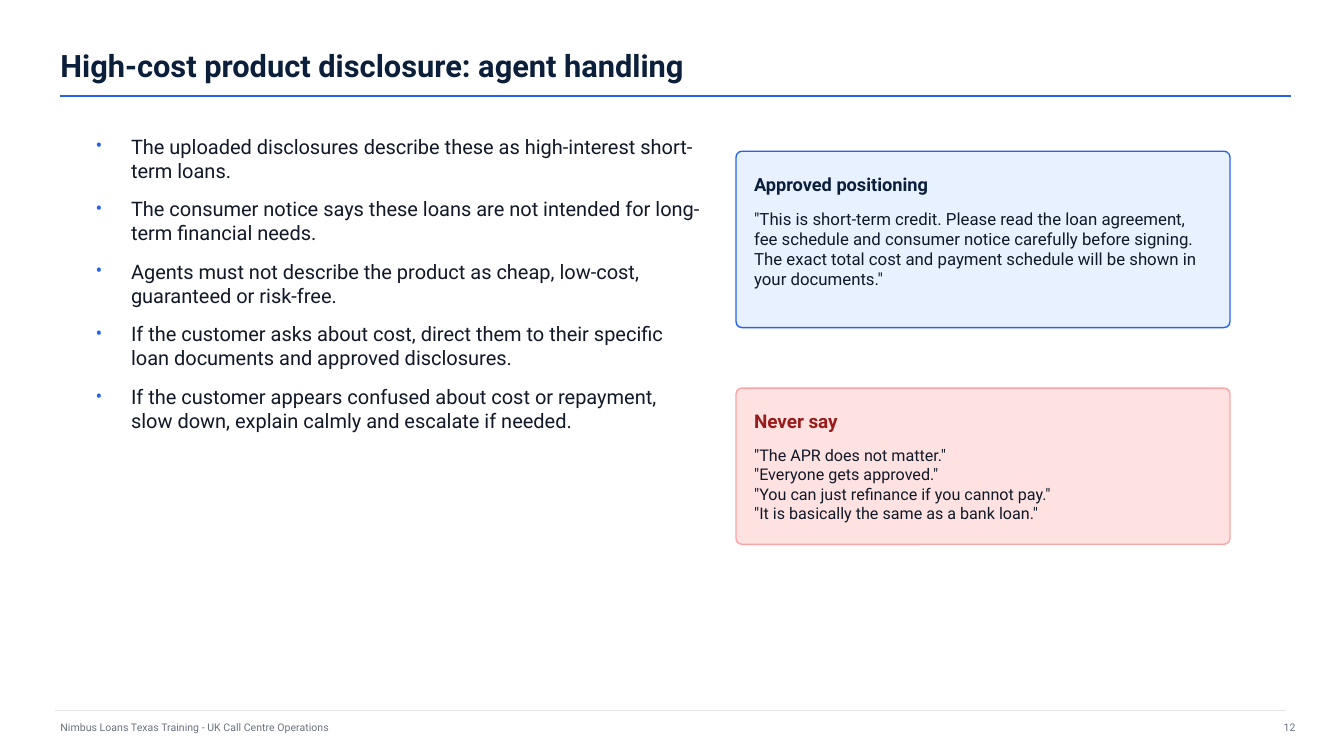
from lxml.etree import SubElement as Sub
from pptx import Presentation
from pptx.dml.color import RGBColor as RGB
from pptx.enum.shapes import MSO_CONNECTOR as LINE, MSO_SHAPE as SHAPE
from pptx.enum.text import MSO_ANCHOR as ANCHOR, PP_ALIGN as ALIGN
from pptx.oxml.ns import qn
from pptx.util import Inches, Pt

NAVY = RGB(0x0B, 0x1F, 0x3A)
INK = RGB(0x11, 0x18, 0x27)
BLUE = RGB(0x25, 0x63, 0xEB)
PALE_BLUE = RGB(0xE8, 0xF1, 0xFF)
DARK_RED = RGB(0x99, 0x1B, 0x1B)
RED = RGB(0xFC, 0xA5, 0xA5)
PALE_RED = RGB(0xFE, 0xE2, 0xE2)
GREY = RGB(0x6B, 0x72, 0x80)
RULE_GREY = RGB(0xE5, 0xE7, 0xEB)


class Deck:
    font = "Roboto"
    cell = Inches(0.1)
    pad = 1.8
    radius = 0.6

    def __init__(self, prs):
        self.s = prs.slides.add_slide(prs.slide_layouts[6])

    def grid(self, *cells):
        return [round(n * self.cell) for n in cells]

    def text(self, box, lines, size, color, bold=False, align=ALIGN.LEFT,
             anchor=ANCHOR.MIDDLE, gap=0, bullet=None, indent=0):
        tf = self.s.shapes.add_textbox(*self.grid(*box)).text_frame
        frame = {"word_wrap": True, "vertical_anchor": anchor, "margin_left": 0,
                 "margin_right": 0, "margin_top": 0, "margin_bottom": 0}
        for name, value in frame.items():
            setattr(tf, name, value)
        style = {"name": self.font, "size": Pt(size), "bold": bold}
        for i, line in enumerate(lines):
            p = tf.add_paragraph() if i else tf.paragraphs[0]
            p.alignment = align
            if gap and i:
                p.space_before = Pt(gap)
            if bullet:
                self.bullet(p, bullet, indent)
            r = p.add_run()
            r.text = line
            for name, value in style.items():
                setattr(r.font, name, value)
            r.font.color.rgb = color

    def bullet(self, p, color, indent):
        pPr = p._p.get_or_add_pPr()
        hang, = self.grid(indent)
        pPr.set("marL", str(hang))
        pPr.set("indent", str(-hang))
        Sub(Sub(pPr, qn("a:buClr")), qn("a:srgbClr"), val=str(color))
        Sub(pPr, qn("a:buFont"), typeface=self.font)
        Sub(pPr, qn("a:buChar"), char="•")

    def rule(self, x, y, w, color, width):
        sp = self.s.shapes.add_connector(LINE.STRAIGHT, *self.grid(x, y, x + w, y))
        sp.line.color.rgb = color
        sp.line.width = Pt(width)
        Sub(sp._element.spPr, qn("a:effectLst"))

    def card(self, box, fill, edge, title, title_size, title_color, lines, size):
        x, y, w, h = box
        sp = self.s.shapes.add_shape(SHAPE.ROUNDED_RECTANGLE, *self.grid(*box))
        sp.adjustments[0] = self.radius / h
        sp.shadow.inherit = False
        sp.fill.solid()
        sp.fill.fore_color.rgb = fill
        sp.line.color.rgb = edge
        sp.line.width = Pt(1)
        left, inner = x + self.pad, w - 2 * self.pad
        self.text((left, y + 1.5, inner, 3.5), [title], title_size, title_color, bold=True)
        self.text((left, y + 5.7, inner, h - 7.2), lines, size, INK, anchor=ANCHOR.TOP)


def main():
    prs = Presentation()
    prs.slide_width, prs.slide_height = Inches(13.33), Inches(7.5)
    deck = Deck(prs)

    deck.text((6, 4.2, 120, 4.5), ["High-cost product disclosure: agent handling"],
              22, NAVY, bold=True)
    deck.rule(6, 9.5, 122, BLUE, 1.2)
    deck.rule(5.5, 70.5, 122, RULE_GREY, 0.75)
    deck.text((6, 71.2, 75, 2), ["Nimbus Loans Texas Training - UK Call Centre Operations"],
              7.5, GREY)
    deck.text((122.5, 71.2, 6, 2), ["12"], 7.5, GREY, align=ALIGN.RIGHT)

    deck.text((9.5, 13.3, 60, 29), [
        "The uploaded disclosures describe these as high-interest short-term loans.",
        "The consumer notice says these loans are not intended for long-term financial needs.",
        "Agents must not describe the product as cheap, low-cost, guaranteed or risk-free.",
        "If the customer asks about cost, direct them to their specific loan documents "
        "and approved disclosures.",
        "If the customer appears confused about cost or repayment, slow down, explain "
        "calmly and escalate if needed.",
    ], 14.3, INK, anchor=ANCHOR.TOP, gap=10.4, bullet=BLUE, indent=3.5)

    deck.card((73, 15, 49, 17.5), PALE_BLUE, BLUE, "Approved positioning", 13, NAVY, [
        '"This is short-term credit. Please read the loan agreement, fee schedule and '
        'consumer notice carefully before signing. The exact total cost and payment '
        'schedule will be shown in your documents."',
    ], 12)
    deck.card((73, 38.5, 49, 15.5), PALE_RED, RED, "Never say", 13.5, DARK_RED, [
        '"The APR does not matter."',
        '"Everyone gets approved."',
        '"You can just refinance if you cannot pay."',
        '"It is basically the same as a bank loan."',
    ], 11.5)

    prs.save("out.pptx")


if __name__ == "__main__":
    main()
